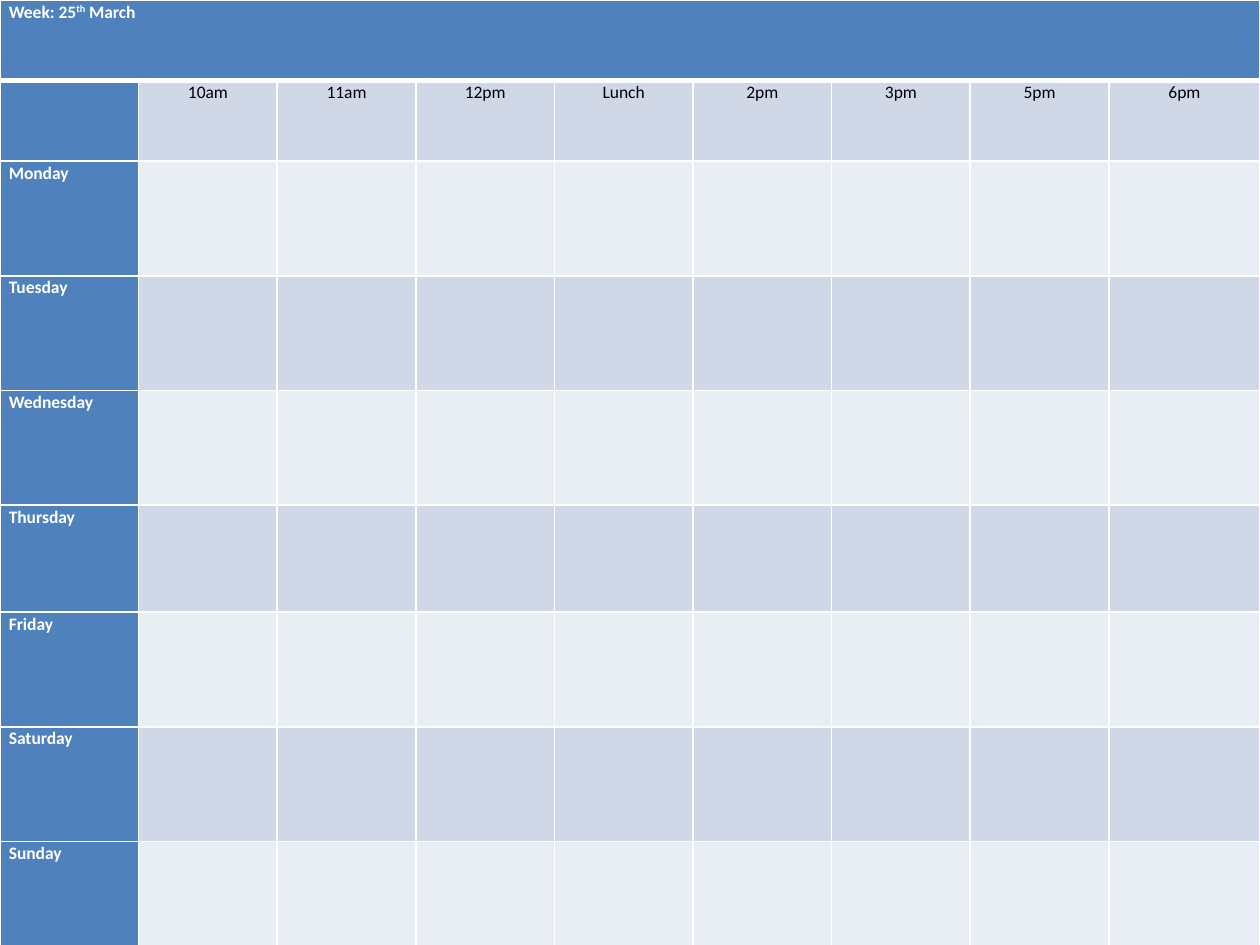
import pptx
import pptx.util
import pptx.dml.color
import pptx.enum.text
import pptx.oxml
import pptx.oxml.ns
import lxml.etree

theme = {
    "font": "Calibri",
    "size": pptx.util.Pt(10),
    "header": "4F81BD",
    "bands": ("E9EDF4", "D0D8E8"),
    "rule": "FFFFFF",
    "light": "FFFFFF",
    "dark": "000000",
}
hours = ["10am", "11am", "12pm", "Lunch", "2pm", "3pm", "5pm", "6pm"]
days = ["Monday", "Tuesday", "Wednesday", "Thursday", "Friday", "Saturday", "Sunday"]


def write(paragraph, text, color=theme["light"], bold=True, align=None, raised=False):
    paragraph.alignment = align
    paragraph.line_spacing = 1.07
    paragraph.space_after = pptx.util.Pt(8)
    run = paragraph.add_run()
    run.text = text
    run.font.name = theme["font"]
    run.font.size = theme["size"]
    run.font.bold = bold
    run.font.color.rgb = pptx.dml.color.RGBColor.from_string(color)
    if raised:
        run.font._element.set("baseline", "30000")


def style_cell(cell, color, **widths):
    properties = cell._tc.get_or_add_tcPr()
    for side in "LRTB":
        line = lxml.etree.SubElement(properties, pptx.oxml.ns.qn(f"a:ln{side}"))
        line.set("w", str(pptx.util.Pt(widths.get(side, 1))))
        fill = lxml.etree.SubElement(line, pptx.oxml.ns.qn("a:solidFill"))
        lxml.etree.SubElement(fill, pptx.oxml.ns.qn("a:srgbClr")).set("val", theme["rule"])
    cell.fill.solid()
    cell.fill.fore_color.rgb = pptx.dml.color.RGBColor.from_string(color)
    cell.margin_left = cell.margin_right = pptx.util.Inches(0.07)
    cell.margin_top = cell.margin_bottom = 0


presentation = pptx.Presentation()
presentation.slide_width = pptx.util.Inches(10)
presentation.slide_height = pptx.util.Inches(7.5)
slide = presentation.slides.add_slide(presentation.slide_layouts[6])

column_widths = [1.1] * len(hours) + [1.2]
row_heights = [0.64] * 2 + [0.91] * len(days)
row_heights[2 + days.index("Thursday")] = 0.85
timetable = slide.shapes.add_table(
    len(row_heights), len(column_widths), 0, 0,
    presentation.slide_width, pptx.util.Inches(sum(row_heights)),
).table
for column, width in zip(timetable.columns, column_widths):
    column.width = pptx.util.Inches(width)
for row, height in zip(timetable.rows, row_heights):
    row.height = pptx.util.Inches(height)

for r in range(len(row_heights)):
    for c in range(len(column_widths)):
        color = theme["header"] if r == 0 or c == 0 else theme["bands"][r % 2]
        rules = {0: {"B": 3}, 1: {"T": 3}}.get(r, {})
        style_cell(timetable.cell(r, c), color, **rules)

week = timetable.cell(0, 0)
week.merge(timetable.cell(0, len(hours)))
heading = week.text_frame.paragraphs[0]
write(heading, "Week: 25")
write(heading, "th", raised=True)
write(heading, " March")

for c, hour in enumerate(hours, start=1):
    write(timetable.cell(1, c).text_frame.paragraphs[0], hour, color=theme["dark"],
          bold=False, align=pptx.enum.text.PP_ALIGN.CENTER)
for r, day in enumerate(days, start=2):
    write(timetable.cell(r, 0).text_frame.paragraphs[0], day)

presentation.save("out.pptx")
